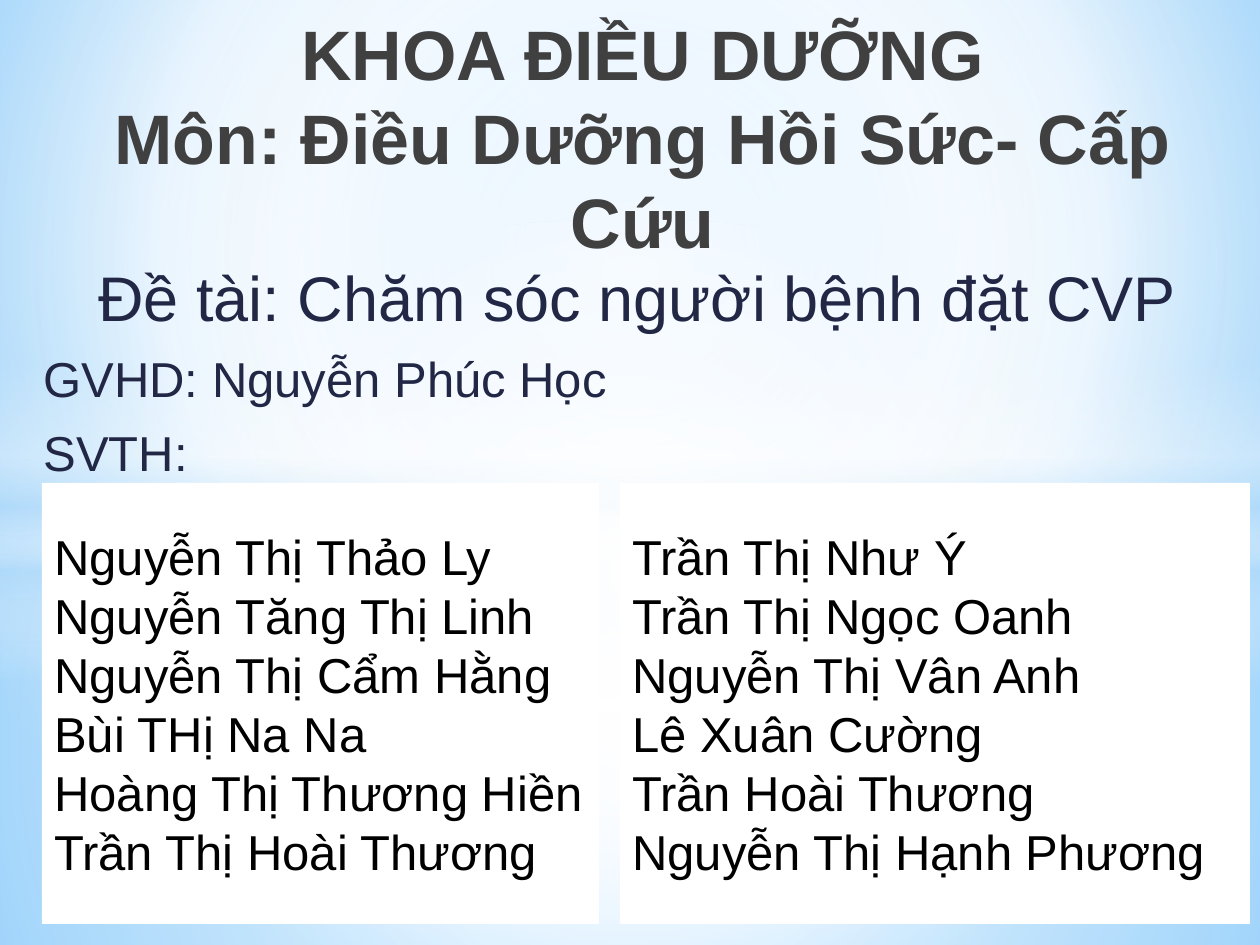
import pptx
import pptx.util
import pptx.dml.color
import pptx.enum.shapes
import pptx.enum.text
import pptx.oxml
import pptx.oxml.ns

SHAPES = pptx.enum.shapes.MSO_SHAPE
ALIGN = pptx.enum.text.PP_ALIGN
ANCHOR = pptx.enum.text.MSO_ANCHOR
FONT = "Arial"
NAVY = "212745"
WIDTH, HEIGHT = 1260, 945
HORIZON = 533
CENTRE = (50, 50, 50, 50)


def px(length):
    return pptx.util.Emu(round(length * 914400 / 126))


def color(hex_value):
    return pptx.dml.color.RGBColor.from_string(hex_value)


def apply_gradient(fill, properties, stops, focus=None):
    """Stops are (position %, hex, opacity %); without a focus the gradient runs downwards."""
    stop_xml = "".join(
        f'<a:gs pos="{position * 1000}"><a:srgbClr val="{hex_value}">'
        f'<a:alpha val="{opacity * 1000}"/></a:srgbClr></a:gs>'
        for position, hex_value, opacity in stops)
    if focus:
        sides = " ".join(f'{side}="{value * 1000}"' for side, value in zip("ltrb", focus))
        direction = f'<a:path path="circle"><a:fillToRect {sides}/></a:path>'
    else:
        direction = '<a:lin ang="5400000" scaled="0"/>'
    gradient = pptx.oxml.parse_xml(
        f'<a:gradFill {pptx.oxml.ns.nsdecls("a")} rotWithShape="1">'
        f'<a:gsLst>{stop_xml}</a:gsLst>{direction}</a:gradFill>')
    fill.solid()
    properties.replace(properties.find(pptx.oxml.ns.qn("a:solidFill")), gradient)


def add_plain_shape(slide, kind, box):
    shape = slide.shapes.add_shape(kind, *map(px, box))
    shape.shadow.inherit = False
    shape.line.fill.background()
    return shape


def format_paragraph(paragraph, size, hex_value, alignment=ALIGN.LEFT, bold=False):
    paragraph.alignment = alignment
    font = paragraph.font
    font.name, font.size, font.bold = FONT, pptx.util.Pt(size), bold
    font.color.rgb = color(hex_value)


def place(shape, box):
    shape.left, shape.top, shape.width, shape.height = map(px, box)
    frame = shape.text_frame
    frame.word_wrap = True
    frame.auto_size = pptx.enum.text.MSO_AUTO_SIZE.NONE
    frame.vertical_anchor = ANCHOR.TOP
    return frame


def add_backdrop(slide):
    fill = slide.background.fill
    fill.solid()
    background = slide._element.xpath("./p:cSld/p:bg/p:bgPr")[0]
    apply_gradient(fill, background,
                   [(0, "9ED5FF", 100), (60, "FFFFFF", 100), (100, "5BB9FF", 100)],
                   (20, 10, 20, 60))
    layers = [
        (SHAPES.RECTANGLE, (0, HORIZON, WIDTH, HEIGHT - HORIZON), CENTRE,
         [(0, "FFFFFF", 91), (37, "FFFFFF", 76), (100, "B4DCFA", 79)]),
        (SHAPES.RECTANGLE, (0, 0, WIDTH, HORIZON), CENTRE,
         [(0, "FFFFFF", 89), (48, "FFFFFF", 62), (100, "B4DCFA", 79)]),
        (SHAPES.RECTANGLE, (0, 365, WIDTH, 315), None,
         [(0, "FFFFFF", 0), (29, "FFFFFF", 30), (45, "B4DCFA", 40),
          (55, "FFFFFF", 26), (65, "B4DCFA", 60), (100, "FFFFFF", 0)]),
        (SHAPES.OVAL, (0, 220, WIDTH, 703), CENTRE,
         [(0, "FFFFFF", 100), (54, "FFFFFF", 0)]),
    ]
    for kind, box, focus, stops in layers:
        shape = add_plain_shape(slide, kind, box)
        apply_gradient(shape.fill, shape._element.spPr, stops, focus)


def fill_title(title, box):
    frame = place(title, box)
    frame.text = "KHOA ĐIỀU DƯỠNG\vMôn: Điều Dưỡng Hồi Sức- Cấp Cứu"
    paragraph = frame.paragraphs[0]
    format_paragraph(paragraph, 40, "404040", ALIGN.CENTER, bold=True)
    paragraph._p.get_or_add_pPr().set("marL", str(px(25)))


def fill_subtitle(subtitle, box):
    frame = place(subtitle, box)
    lines = [
        ("Đề tài: Chăm sóc người bệnh đặt CVP ", 36, ALIGN.CENTER),
        ("GVHD: Nguyễn Phúc Học", 28, ALIGN.LEFT),
        ("SVTH:", 28, ALIGN.LEFT),
    ]
    frame.text = "\n".join(text for text, _, _ in lines)
    for paragraph, (_, size, alignment) in zip(frame.paragraphs, lines):
        format_paragraph(paragraph, size, NAVY, alignment)
        paragraph.space_before = pptx.util.Pt(size * 0.2)
        paragraph.space_after = pptx.util.Pt(3)


def add_name_list(slide, box, names):
    shape = add_plain_shape(slide, SHAPES.RECTANGLE, box)
    shape.fill.solid()
    shape.fill.fore_color.rgb = color("FFFFFF")
    frame = place(shape, box)
    frame.vertical_anchor = ANCHOR.MIDDLE
    frame.text = "\n".join(names)
    for paragraph in frame.paragraphs:
        format_paragraph(paragraph, 28, "000000")


def main():
    presentation = pptx.Presentation()
    presentation.slide_width, presentation.slide_height = px(WIDTH), px(HEIGHT)
    slide = presentation.slides.add_slide(presentation.slide_layouts[0])
    title, subtitle = slide.placeholders
    add_backdrop(slide)
    for placeholder in (subtitle, title):
        slide.shapes._spTree.append(placeholder._element)
    fill_subtitle(subtitle, (31, 252, 1229, 693))
    fill_title(title, (0, 4, WIDTH, 247))
    add_name_list(slide, (42, 483, 557, 441), [
        "Nguyễn Thị Thảo Ly", "Nguyễn Tăng Thị Linh", "Nguyễn Thị Cẩm Hằng",
        "Bùi THị Na Na", "Hoàng Thị Thương Hiền", "Trần Thị Hoài Thương"])
    add_name_list(slide, (620, 483, 630, 441), [
        "Trần Thị Như Ý", "Trần Thị Ngọc Oanh", "Nguyễn Thị Vân Anh",
        "Lê Xuân Cường", "Trần Hoài Thương", "Nguyễn Thị Hạnh Phương"])
    presentation.save("out.pptx")


if __name__ == "__main__":
    main()
